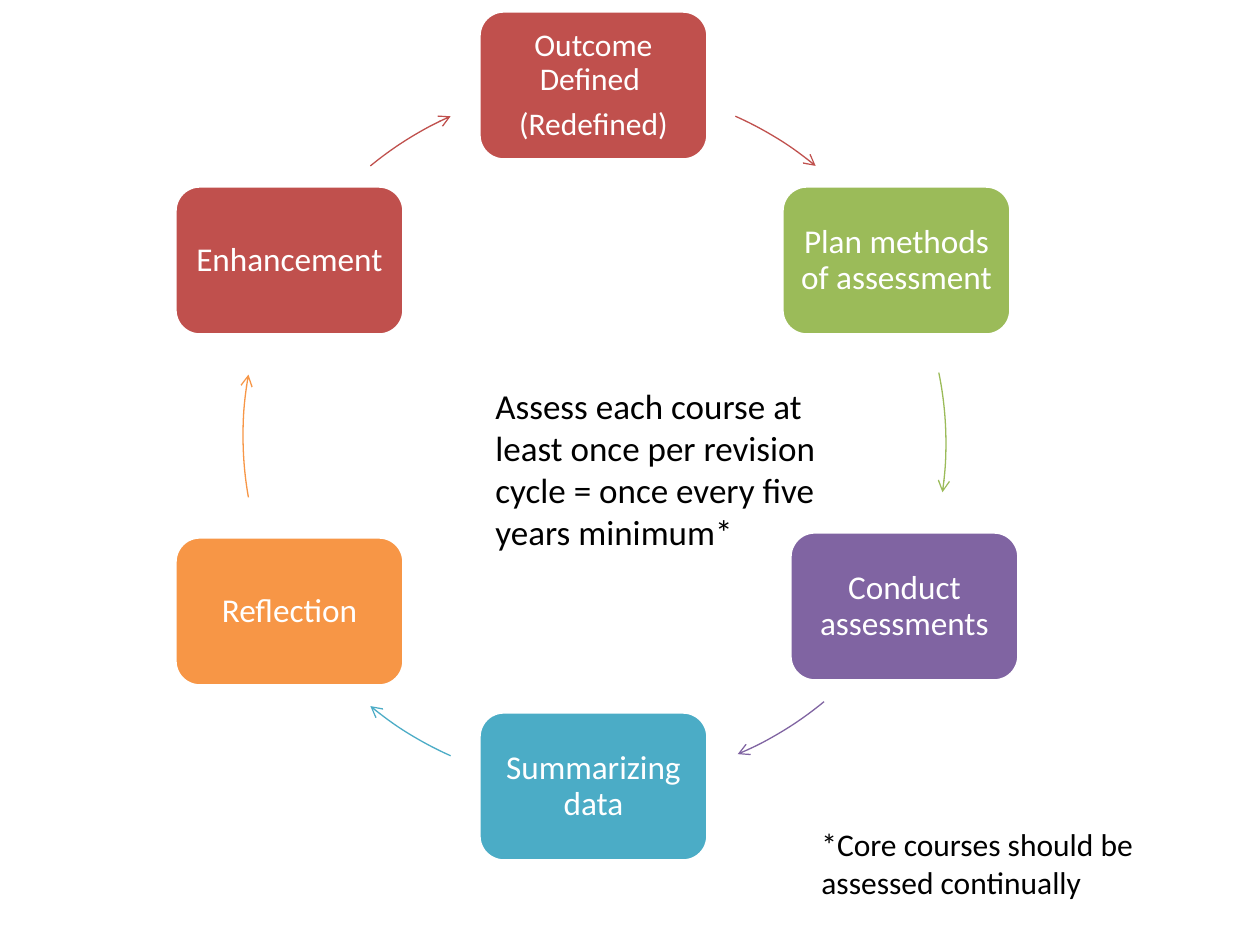
from lxml import etree
from pptx import Presentation
from pptx.dml.color import RGBColor
from pptx.enum.shapes import MSO_SHAPE
from pptx.enum.text import MSO_ANCHOR, PP_ALIGN
from pptx.oxml.ns import qn
from pptx.util import Emu, Pt

ROUNDED = MSO_SHAPE.ROUNDED_RECTANGLE
ARC = MSO_SHAPE.ARC
MIDDLE = MSO_ANCHOR.MIDDLE
LEFT, CENTER = PP_ALIGN.LEFT, PP_ALIGN.CENTER

EMU_PER_PX = 914400 / 126
FONT = "Calibri"
WHITE, BLACK = "FFFFFF", "000000"
RED, GREEN, PURPLE = "C0504D", "9BBB59", "8064A2"
TEAL, ORANGE = "4BACC6", "F79646"

STEP_WIDTH, STEP_HEIGHT, STEP_INSET = 229, 149, 10
RING_SIZE = 700
RING = (243, 86)

# paragraphs, text size, colour, step corner, ring corner, arrow angles
STEPS = [
    (["Outcome Defined ", "(Redefined)"], 18, RED, (479, 11), RING, (294, 309.5)),
    (["Plan methods of assessment"], 19, GREEN, (782, 186), (246, 93), (348.4, 8.1)),
    (["Conduct assessments"], 19, PURPLE, (790, 532), (251, 82), (50.4, 67)),
    (["Summarizing data"], 19, TEAL, (479, 712), RING, (114, 129.5)),
    (["Reflection"], 19, ORANGE, (175, 537), RING, (169.9, 190.1)),
    (["Enhancement"], 19, RED, (175, 186), RING, (230.5, 246)),
]


def px(length):
    return Emu(round(length * EMU_PER_PX))


def rgb(color):
    return RGBColor.from_string(color)


def write(frame, paragraphs, size, color, align=LEFT, spacing=1.0, after=0):
    frame.word_wrap = True
    for index, text in enumerate(paragraphs):
        paragraph = frame.paragraphs[0] if index == 0 else frame.add_paragraph()
        paragraph.alignment = align
        paragraph.line_spacing = spacing
        paragraph.space_after = Pt(after)
        run = paragraph.add_run()
        run.text = text
        run.font.name = FONT
        run.font.size = Pt(size)
        run.font.color.rgb = rgb(color)


class CycleSlide:
    def __init__(self, presentation):
        self.slide = presentation.slides.add_slide(presentation.slide_layouts[6])

    def shape(self, kind, corner, width, height, line_color, line_width):
        left, top = corner
        shape = self.slide.shapes.add_shape(
            kind, px(left), px(top), px(width), px(height))
        shape.shadow.inherit = False
        shape.line.color.rgb = rgb(line_color)
        shape.line.width = Pt(line_width)
        return shape

    def step(self, paragraphs, size, color, corner):
        step = self.shape(ROUNDED, corner, STEP_WIDTH, STEP_HEIGHT, WHITE, 2)
        step.fill.solid()
        step.fill.fore_color.rgb = rgb(color)
        frame = step.text_frame
        frame.vertical_anchor = MIDDLE
        frame.margin_left = frame.margin_right = px(STEP_INSET)
        frame.margin_top = frame.margin_bottom = px(STEP_INSET)
        write(frame, paragraphs, size, WHITE, align=CENTER, spacing=0.9,
              after=round(size * 0.35, 1))

    def arrow(self, color, corner, angles):
        """Draw part of the ring, clockwise between two angles in degrees from east."""
        arrow = self.shape(ARC, corner, RING_SIZE, RING_SIZE, color, 0.75)
        arrow.fill.background()
        for index, angle in enumerate(angles):
            # An angle is stored in 1/60000 degree, an adjustment in 1/100000.
            arrow.adjustments[index] = angle * 0.6
        line = arrow.line._get_or_add_ln()
        etree.SubElement(line, qn("a:tailEnd"), type="arrow")

    def note(self, text, size, left, top, width, height):
        note = self.slide.shapes.add_textbox(px(left), px(top), px(width), px(height))
        write(note.text_frame, [text], size, BLACK)


def main():
    presentation = Presentation()
    presentation.slide_width = px(1260)
    presentation.slide_height = px(945)
    cycle = CycleSlide(presentation)
    for paragraphs, size, color, corner, ring, angles in STEPS:
        cycle.step(paragraphs, size, color, corner)
        cycle.arrow(color, ring, angles)
    cycle.note("Assess each course at least once per revision cycle"
               " = once every five years minimum*", 20, 483, 378, 388, 183)
    cycle.note("*Core courses should be assessed continually", 18, 809, 819, 357, 89)
    presentation.save("out.pptx")


if __name__ == "__main__":
    main()
